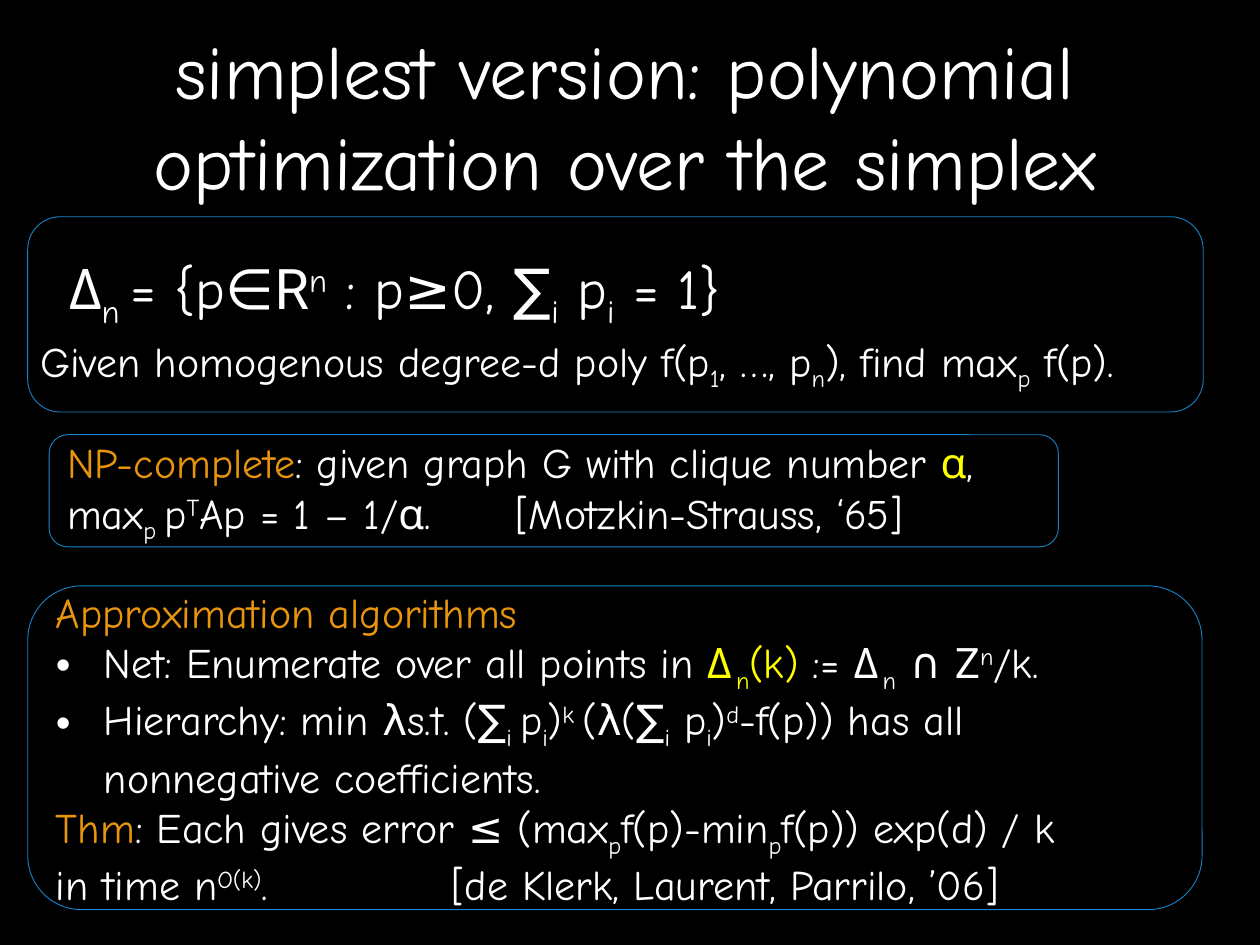
"""Build the slide on polynomial optimization over the simplex."""
from dataclasses import dataclass
from typing import Optional

from lxml import etree
from pptx import Presentation
from pptx.dml.color import RGBColor
from pptx.enum.shapes import MSO_SHAPE
from pptx.enum.text import MSO_ANCHOR, MSO_AUTO_SIZE, PP_ALIGN
from pptx.oxml.ns import qn
from pptx.util import Inches, Pt

ROUNDED = MSO_SHAPE.ROUNDED_RECTANGLE
MIDDLE = MSO_ANCHOR.MIDDLE
GROW = MSO_AUTO_SIZE.SHAPE_TO_FIT_TEXT
LEFT, CENTER = PP_ALIGN.LEFT, PP_ALIGN.CENTER


@dataclass(frozen=True)
class Theme:
    background: str = "000000"
    text: str = "FFFFFF"
    heading: str = "E8950E"
    highlight: str = "FFFF00"
    outline: str = "1884CD"
    font: str = "Comic Neue"
    set_font: str = "Roboto"
    title_size: float = 43.2
    formula_size: float = 32
    body_size: float = 24
    outline_width: float = 0.5


THEME = Theme()


@dataclass(frozen=True)
class Span:
    text: str
    color: str = THEME.text
    baseline: int = 0
    font: str = THEME.font


@dataclass(frozen=True)
class Para:
    spans: list[Span]
    bullet: bool = False
    tab: Optional[float] = None


@dataclass(frozen=True)
class Area:
    left: float
    top: float
    width: float
    height: float

    def lengths(self) -> list[int]:
        return [Inches(side) for side in (self.left, self.top, self.width, self.height)]


@dataclass(frozen=True)
class Panel:
    area: Area
    paras: list[Para]


def sub(text: str, color: str = THEME.text) -> Span:
    return Span(text, color, -25)


def sup(text: str) -> Span:
    return Span(text, baseline=30)


def number_set(letter: str) -> Span:
    return Span(letter, font=THEME.set_font)


TITLE = [Para([Span("simplest version: polynomial optimization over the simplex")])]

SIMPLEX = [Para([
    Span("Δ"), sub("n "), Span("= {p∈"), number_set("R"), sup("n"),
    Span(" : p≥0, ∑"), sub("i"), Span(" p"), sub("i"), Span(" = 1}"),
])]

PROBLEM = [Para([
    Span("Given homogenous degree-d poly f(p"), sub("1"), Span(", …, p"), sub("n"),
    Span("), find max"), sub("p"), Span(" f(p)."),
])]

HARDNESS = [
    Para([
        Span("NP-complete", THEME.heading),
        Span(": given graph G with clique number "),
        Span("α", THEME.highlight), Span(","),
    ]),
    Para([
        Span("max"), sub("p "), Span("p"), sup("T"),
        Span("Ap = 1 – 1/α.\t[Motzkin-Strauss, ‘65]"),
    ], tab=3.56),
]

ALGORITHMS = [
    Para([Span("Approximation algorithms", THEME.heading)]),
    Para([
        Span("Net: Enumerate over all points in "), Span("Δ", THEME.highlight),
        sub("n", THEME.highlight), Span("(k)", THEME.highlight), Span(" := Δ"),
        sub("n"), Span(" ∩ "), number_set("Z"), sup("n"), Span("/k."),
    ], bullet=True),
    Para([
        Span("Hierarchy: min λs.t. (∑"), sub("i "), Span("p"), sub("i"), Span(")"),
        sup("k "), Span("(λ(∑"), sub("i"), Span(" p"), sub("i"), Span(")"), sup("d"),
        Span("-f(p)) has all\nnonnegative coefficients."),
    ], bullet=True),
    Para([
        Span("Thm", THEME.heading), Span(": Each gives error ≤ (max"), sub("p"),
        Span("f(p)-min"), sub("p"), Span("f(p)) exp(d) / k\nin time n"),
        sup("O(k)"), Span(".\t[de Klerk, Laurent, Parrilo, ’06]"),
    ], tab=3.14),
]

PANELS = [
    Panel(Area(0.22, 1.72, 9.33, 1.55), []),
    Panel(Area(0.39, 3.45, 8.01, 0.89), HARDNESS),
    Panel(Area(0.22, 4.65, 9.32, 2.57), ALGORITHMS),
]


def set_layout(paragraph, para: Para) -> None:
    """Add the bullet and the tab stop of a paragraph."""
    properties = paragraph._p.get_or_add_pPr()
    if para.bullet:
        indent = Inches(0.38)
        properties.set("marL", str(indent))
        properties.set("indent", str(-indent))
        etree.SubElement(properties, qn("a:buFont")).set("typeface", "Arial")
        etree.SubElement(properties, qn("a:buChar")).set("char", "•")
    if para.tab is not None:
        stops = etree.SubElement(properties, qn("a:tabLst"))
        stop = etree.SubElement(stops, qn("a:tab"))
        stop.set("pos", str(Inches(para.tab)))
        stop.set("algn", "l")


def add_span(paragraph, span: Span, size: float) -> None:
    """Add one formatted span, with line breaks at its newlines."""
    for index, line in enumerate(span.text.split("\n")):
        if index:
            paragraph.add_line_break()
        run = paragraph.add_run()
        run.text = line
        run.font.name = span.font
        run.font.size = Pt(size)
        run.font.color.rgb = RGBColor.from_string(span.color)
        if span.baseline:
            run.font._element.set("baseline", str(span.baseline * 1000))


def write(frame, paras: list[Para], size: float, align=LEFT) -> None:
    """Fill a text frame with paragraphs."""
    for index, para in enumerate(paras):
        paragraph = frame.add_paragraph() if index else frame.paragraphs[0]
        paragraph.alignment = align
        set_layout(paragraph, para)
        for span in para.spans:
            add_span(paragraph, span, size)


def add_title(page) -> None:
    """Add the centred title."""
    frame = page.shapes.add_textbox(*Area(0.39, 0.13, 9.14, 1.56).lengths()).text_frame
    frame.word_wrap = True
    frame.vertical_anchor = MIDDLE
    write(frame, TITLE, THEME.title_size, CENTER)


def add_line_of_text(page, area: Area, paras: list[Para], size: float) -> None:
    """Add a text box that does not wrap."""
    frame = page.shapes.add_textbox(*area.lengths()).text_frame
    frame.word_wrap = False
    frame.auto_size = GROW
    write(frame, paras, size)


def add_panel(page, panel: Panel) -> None:
    """Add an outlined rounded panel with its text."""
    box = page.shapes.add_shape(ROUNDED, *panel.area.lengths())
    box.shadow.inherit = False
    box.fill.background()
    box.line.color.rgb = RGBColor.from_string(THEME.outline)
    box.line.width = Pt(THEME.outline_width)
    box.text_frame.word_wrap = True
    box.text_frame.vertical_anchor = MIDDLE
    write(box.text_frame, panel.paras, THEME.body_size)


def main() -> None:
    """Build and save the deck."""
    deck = Presentation()
    deck.slide_width, deck.slide_height = Inches(10), Inches(7.5)
    page = deck.slides.add_slide(deck.slide_layouts[6])
    page.background.fill.solid()
    page.background.fill.fore_color.rgb = RGBColor.from_string(THEME.background)
    add_title(page)
    add_line_of_text(page, Area(0.45, 1.96, 5.84, 0.64), SIMPLEX, THEME.formula_size)
    add_line_of_text(page, Area(0.22, 2.61, 9.5, 0.5), PROBLEM, THEME.body_size)
    for panel in PANELS:
        add_panel(page, panel)
    deck.save("out.pptx")


if __name__ == "__main__":
    main()
